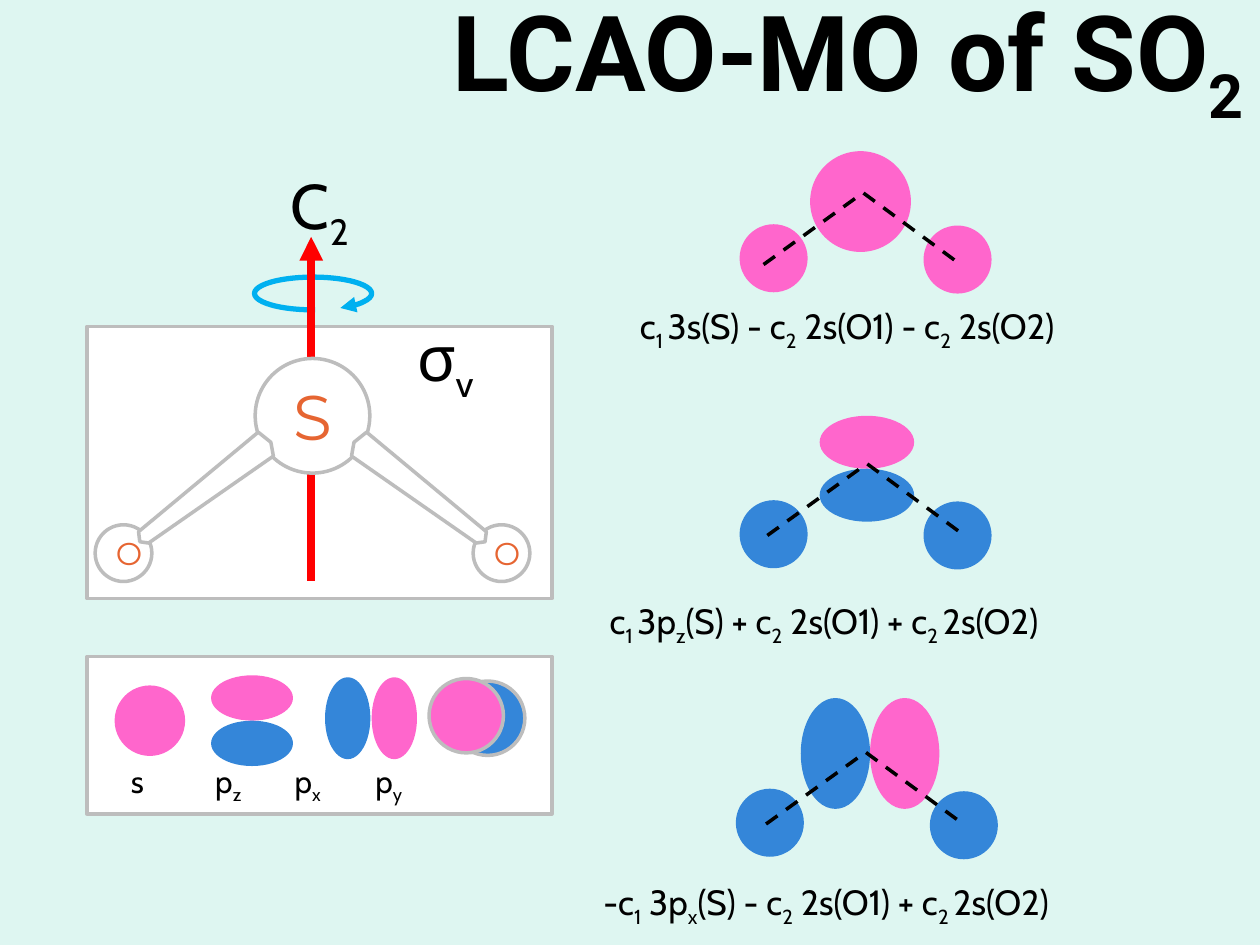
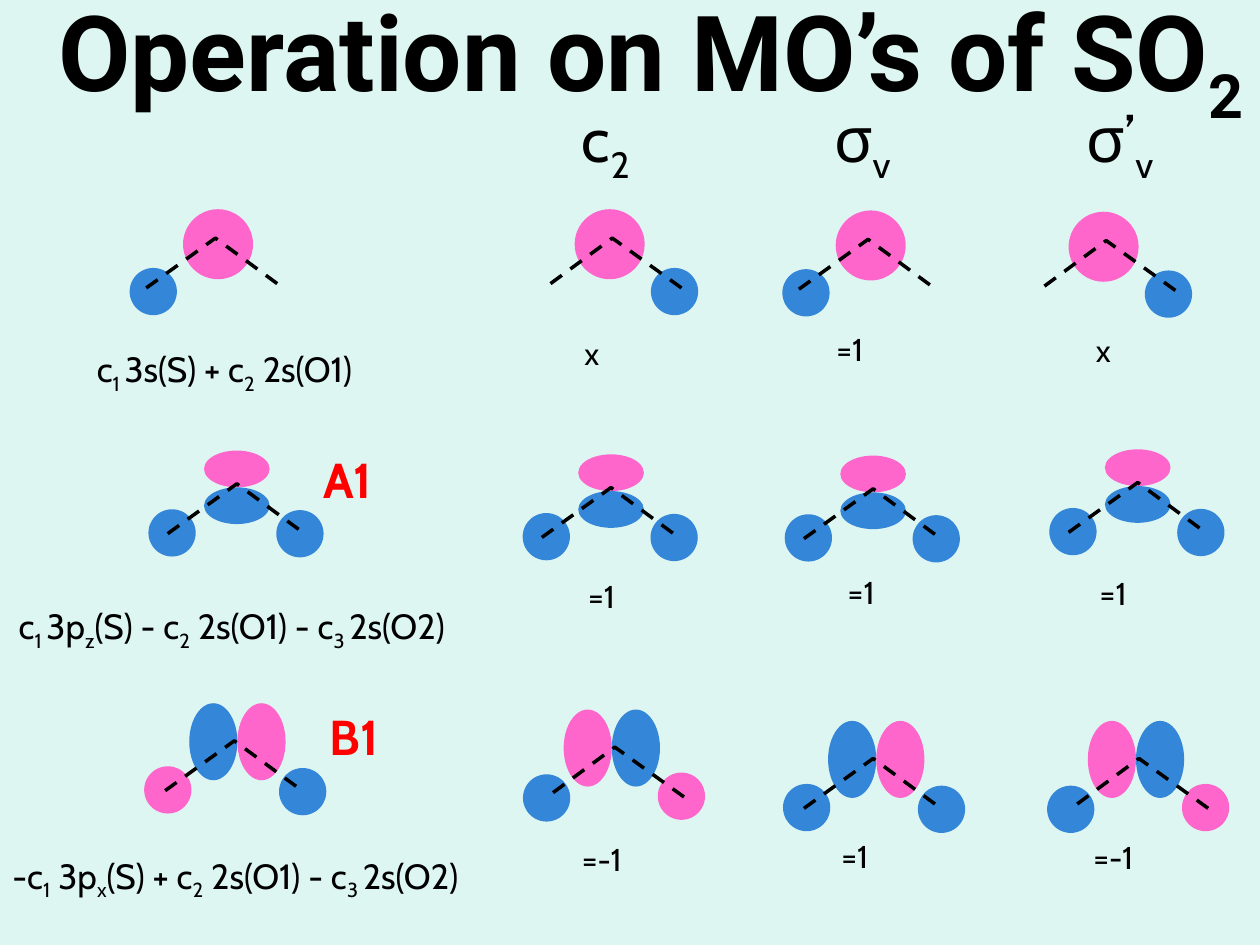
import dataclasses

import pptx
import pptx.dml.color
import pptx.enum.dml
import pptx.enum.shapes
import pptx.enum.text
import pptx.oxml.ns
import pptx.util
from lxml import etree

Inches = pptx.util.Inches
SHAPE = pptx.enum.shapes.MSO_SHAPE
ALIGN = pptx.enum.text.PP_ALIGN
MIDDLE = pptx.enum.text.MSO_ANCHOR.MIDDLE
qn = pptx.oxml.ns.qn


@dataclasses.dataclass(frozen=True)
class Theme:
    background: str = "DEF6F1"
    ink: str = "000000"
    panel: str = "FFFFFF"
    outline: str = "BDBDBD"
    plus: str = "FF66CC"
    minus: str = "3486D9"
    atom: str = "E66532"
    red: str = "FF0000"
    turn: str = "00B0F0"
    title_font: str = "Roboto"
    body_font: str = "Cabin"
    atom_font: str = "Montserrat"
    title: int = 60
    symbol: int = 36
    species: int = 28
    formula: int = 20
    label: int = 18


T = Theme()
LOBE = {"P": T.plus, "B": T.minus}

# Text between braces is subscript.
TITLES = ("LCAO-MO of SO{2}", "Operation on MO’s of SO{2}")

# Orbital lobes: offset of the centre from the sulphur apex, then width and height.
# Order: sulphur lobes, left oxygen, right oxygen.
GEOMETRY = {
    "s": [(-.02, .07, .8, .8), (-.71, .52, .54, .54), (.75, .53, .54, .54)],
    "s one side": [(.03, .07, .8, .8), (-.71, .61, .54, .54)],
    "pz": [(0, -.17, .75, .42), (0, .25, .75, .42), (-.74, .56, .54, .54), (.72, .57, .54, .54)],
    "px": [(-.24, .01, .55, .88), (.31, .01, .55, .88), (-.76, .56, .54, .54), (.78, .58, .54, .54)],
}
BOND = [(-.79, .57), (0, 0), (.76, .56)]

# Slide 1: kind, lobe signs, apex, formula and its box
COMBINATIONS = [
    ("s", "PPP", (6.85, 1.53), "c{1 }3s(S) - c{2} 2s(O1) - c{2} 2s(O2)", (4.98, 2.37, 4.29)),
    ("pz", "PBBB", (6.88, 3.68), "c{1 }3p{z}(S) + c{2} 2s(O1) + c{2 }2s(O2)", (4.74, 4.71, 4.55)),
    ("px", "BPBB", (6.87, 5.97), "-c{1} 3p{x}(S) - c{2} 2s(O1) + c{2 }2s(O2)", (4.69, 6.94, 5.1)),
]
MIRROR_X = 2.48
ATOMS = [("O", 1.5, 4.39, .45, T.label), ("O", -1.5, 4.39, .45, T.label),
         ("S", 0, 3.3, .91, T.symbol)]
ARM = [(-.43, 3.43), (-.33, 3.51), (-.31, 3.62), (-1.3, 4.31), (-1.37, 4.3), (-1.38, 4.22)]
SYMBOLS = [("C{2}", 2.21, 1.27), ("σ{v}", 3.21, 2.48)]
PANELS = [(.69, 2.59, 3.69, 2.16), (.69, 5.21, 3.69, 1.25)]
# Legend lobes: centre, size, sign, outline
LEGEND = [
    (1.19, 5.72, .56, .56, "P", None),
    (2.0, 5.54, .65, .36, "P", None), (2.0, 5.9, .65, .36, "B", None),
    (2.76, 5.7, .36, .65, "B", None), (3.13, 5.7, .36, .65, "P", None),
    (3.87, 5.7, .59, .59, "B", T.outline), (3.7, 5.68, .59, .59, "P", T.outline),
]
LEGEND_NAMES = "s\tp{z}\tp{x}\tp{y}"
LEGEND_TABS = (.67, 1.3, 1.94)

# Slide 2: one row per orbital; images are (signs, apex, mirrored) after each operation
SMALL = .695
OPERATIONS = "c{2}\tσ{v}\tσ’{v}"
OPERATION_TABS = (2, 4)
ROWS = [
    dict(kind="s one side", formula="c{1 }3s(S) + c{2} 2s(O1)", box=(.67, 2.71, 3.17),
         images=[("PB", (1.71, 1.89), False), ("PB", (4.86, 1.89), True),
                 ("PB", (6.89, 1.9), False), ("PB", (8.78, 1.91), True)],
         results=("x", "=1", "x"), at=(-.09, 2.6)),
    dict(kind="pz", formula="c{1 }3p{z}(S) - c{2} 2s(O1) - c{3 }2s(O2)", box=(.05, 4.75, 4.47),
         images=[("PBBB", (1.88, 3.84), False), ("PBBB", (4.85, 3.87), False),
                 ("PBBB", (6.93, 3.88), False), ("PBBB", (9.03, 3.83), False)],
         results=("=1", "=1", "=1"), at=(0, 4.53)),
    dict(kind="px", formula="-c{1} 3p{x}(S) + c{2} 2s(O1) - c{3 }2s(O2)", box=(0, 6.73, 4.94),
         images=[("BPPB", (1.86, 5.88), False), ("BPPB", (4.88, 5.93), True),
                 ("BPBB", (6.93, 6.02), False), ("BPPB", (9.04, 6.02), True)],
         results=("=-1", "=1", "=-1"), at=(-.05, 6.62)),
]
RESULT_COLUMNS = [(4.57, 0), (6.63, -.03), (8.63, -.02)]
SPECIES = [("A1", 2.47, 3.52), ("B1", 2.52, 5.56)]


def rgb(value):
    return pptx.dml.color.RGBColor.from_string(value)


def write(tf, markup, size, font=T.body_font, color=T.ink, bold=False, align=ALIGN.LEFT, tabs=()):
    """Fill a text frame run by run, lowering the parts in braces."""
    p = tf.paragraphs[0]
    p.alignment = align
    if tabs:
        stops = etree.SubElement(p._p.get_or_add_pPr(), qn("a:tabLst"))
        for stop in tabs:
            etree.SubElement(stops, qn("a:tab"), pos=str(Inches(stop)), algn="l")
    for chunk in markup.split("{"):
        low, brace, rest = chunk.partition("}")
        for text, lowered in ((low, bool(brace)), (rest, False)):
            if not text:
                continue
            r = p.add_run()
            r.text = text
            r.font.size, r.font.name, r.font.bold = pptx.util.Pt(size), font, bold
            r.font.color.rgb = rgb(color)
            if lowered:
                r.font._element.set("baseline", "-25000")


def add_text(s, markup, x, y, w, size, h=.44, anchor=None, **style):
    tf = s.shapes.add_textbox(*map(Inches, (x, y, w, h))).text_frame
    tf.word_wrap = True
    if anchor is not None:
        tf.vertical_anchor = anchor
    write(tf, markup, size, **style)


def paint(sp, fill=None, line=None, width=2):
    sp.shadow.inherit = False
    if fill:
        sp.fill.solid()
        sp.fill.fore_color.rgb = rgb(fill)
    else:
        sp.fill.background()
    if line:
        sp.line.color.rgb = rgb(line)
        sp.line.width = pptx.util.Pt(width)
    else:
        sp.line.fill.background()
    return sp


def add_shape(s, kind, x, y, w, h, **look):
    return paint(s.shapes.add_shape(kind, *map(Inches, (x, y, w, h))), **look)


def add_ellipse(s, cx, cy, w, h, **look):
    return add_shape(s, SHAPE.OVAL, cx - w / 2, cy - h / 2, w, h, **look)


def add_outline(s, points, close, **look):
    points = [(Inches(x), Inches(y)) for x, y in points]
    builder = s.shapes.build_freeform(*points[0])
    builder.add_line_segments(points[1:], close=close)
    return paint(builder.convert_to_shape(), **look)


def add_arrowhead(sp):
    etree.SubElement(sp.line._get_or_add_ln(), qn("a:tailEnd"), type="triangle")


def add_orbital(s, kind, signs, apex, scale=1, mirrored=False):
    """Draw the lobes of an SO2 orbital around its apex, then the dashed bonds."""
    x0, y0 = apex
    sx = -scale if mirrored else scale
    for (dx, dy, w, h), sign in zip(GEOMETRY[kind], signs):
        add_ellipse(s, x0 + dx * sx, y0 + dy * scale, w * scale, h * scale, fill=LOBE[sign])
    bond = add_outline(s, [(x0 + dx * sx, y0 + dy * scale) for dx, dy in BOND], False, line=T.ink)
    bond.line.dash_style = pptx.enum.dml.MSO_LINE.DASH


def add_slide(prs, title):
    s = prs.slides.add_slide(prs.slide_layouts[6])
    s.background.fill.solid()
    s.background.fill.fore_color.rgb = rgb(T.background)
    add_text(s, title, .24, .05, 9.73, T.title, h=.83, anchor=MIDDLE,
             font=T.title_font, bold=True, align=ALIGN.RIGHT)
    return s


def add_molecule(s):
    arc = add_shape(s, SHAPE.ARC, 2.02, 2.2, .93, .26, line=T.turn, width=3)
    for i, degrees in enumerate((82.32, 27.92)):
        arc.adjustments[i] = degrees * .6
    add_arrowhead(arc)

    axis = s.shapes.add_connector(pptx.enum.shapes.MSO_CONNECTOR.STRAIGHT,
                                  *map(Inches, (2.47, 4.61, 2.47, 1.88)))
    axis.line.color.rgb = rgb(T.red)
    axis.line.width = pptx.util.Pt(4.5)
    add_arrowhead(axis)
    etree.SubElement(axis._element.spPr, qn("a:effectLst"))

    for name, dx, cy, d, size in ATOMS:
        atom = add_ellipse(s, MIRROR_X + dx, cy, d, d, fill=T.panel, line=T.outline)
        atom.text_frame.vertical_anchor = MIDDLE
        write(atom.text_frame, name, size, font=T.atom_font, color=T.atom, align=ALIGN.CENTER)
    for side in (1, -1):
        add_outline(s, [(MIRROR_X + side * dx, y) for dx, y in ARM], True,
                    fill=T.panel, line=T.outline)


def build_combinations(prs):
    s = add_slide(prs, TITLES[0])
    for panel in PANELS:
        add_shape(s, SHAPE.RECTANGLE, *panel, fill=T.panel, line=T.outline)
    add_molecule(s)
    for cx, cy, w, h, sign, line in LEGEND:
        add_ellipse(s, cx, cy, w, h, fill=LOBE[sign], line=line)
    add_text(s, LEGEND_NAMES, .94, 6, 3.43, T.label, tabs=LEGEND_TABS)
    for kind, signs, apex, formula, box in COMBINATIONS:
        add_orbital(s, kind, signs, apex)
        add_text(s, formula, *box, T.formula)
    for symbol, x, y in SYMBOLS:
        add_text(s, symbol, x, y, 1.06, T.symbol, h=.71)


def build_operations(prs):
    s = add_slide(prs, TITLES[1])
    add_text(s, OPERATIONS, 4.52, .74, 5.3, T.symbol, h=.71, tabs=OPERATION_TABS)
    for row in ROWS:
        for signs, apex, mirrored in row["images"]:
            add_orbital(s, row["kind"], signs, apex, SMALL, mirrored)
        add_text(s, row["formula"], *row["box"], T.formula)
        dx, top = row["at"]
        for result, (x, dy) in zip(row["results"], RESULT_COLUMNS):
            indent = .06 if result == "x" else 0
            add_text(s, result, x + dx + indent, top + dy, .7, T.label, h=.4)
    for species, x, y in SPECIES:
        add_text(s, species, x, y, 1.33, T.species, h=.57, color=T.red, bold=True)


def main():
    prs = pptx.Presentation()
    prs.slide_width, prs.slide_height = Inches(10), Inches(7.5)
    build_combinations(prs)
    build_operations(prs)
    prs.save("out.pptx")


if __name__ == "__main__":
    main()
